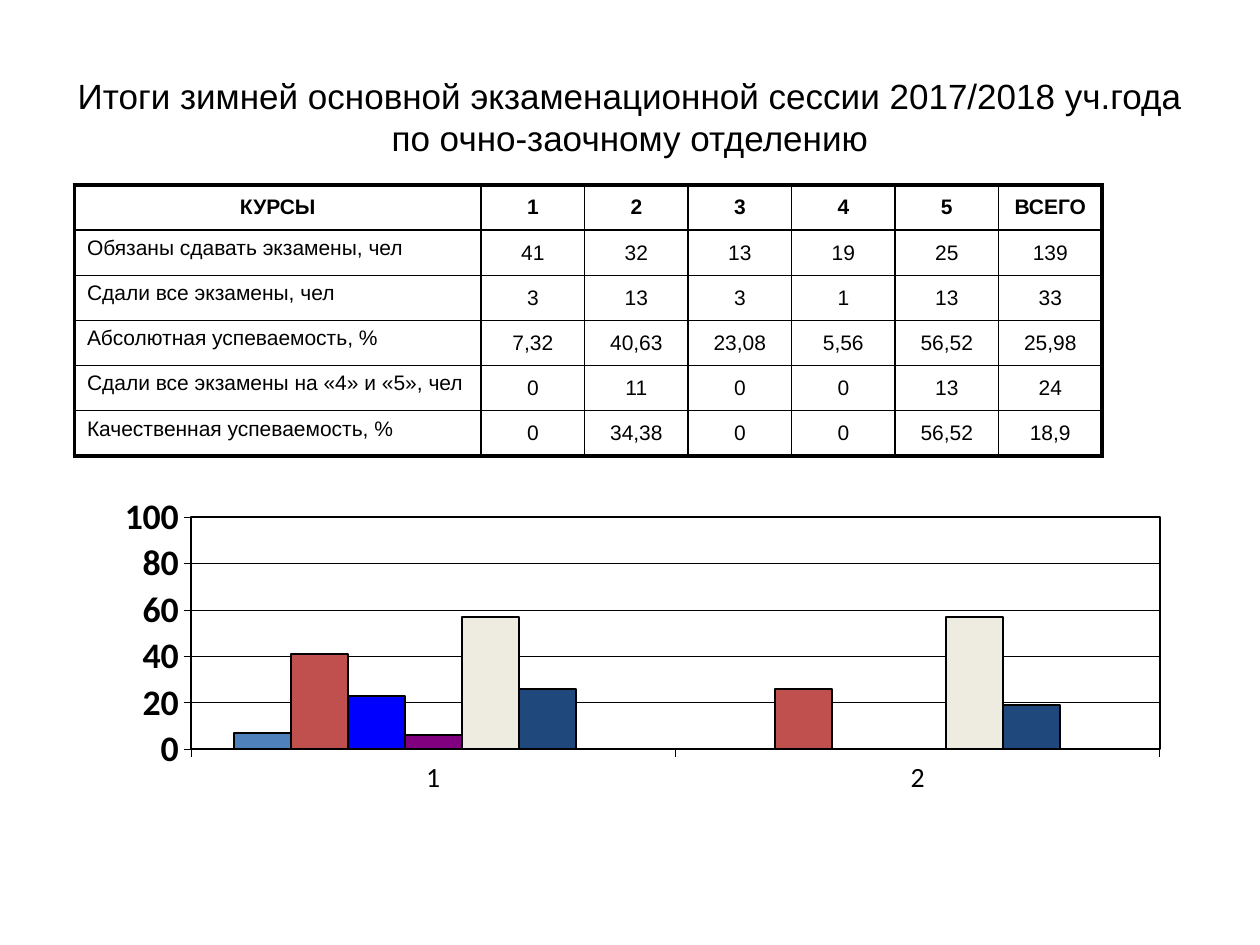
from dataclasses import dataclass
from typing import Any, NamedTuple

from lxml import etree
from pptx import Presentation
from pptx.chart.data import CategoryChartData
from pptx.dml.color import RGBColor
from pptx.enum.chart import XL_CHART_TYPE, XL_TICK_MARK
from pptx.enum.text import MSO_ANCHOR, PP_ALIGN
from pptx.oxml import parse_xml
from pptx.oxml.ns import nsdecls, qn
from pptx.util import Cm, Pt

COLUMNS = XL_CHART_TYPE.COLUMN_CLUSTERED
OUTSIDE = XL_TICK_MARK.OUTSIDE
MIDDLE, TOP = MSO_ANCHOR.MIDDLE, MSO_ANCHOR.TOP
CENTER, LEFT = PP_ALIGN.CENTER, PP_ALIGN.LEFT


@dataclass(frozen=True)
class Theme:
    ink: str = "000000"
    text_font: str = "Arial"
    chart_font: str = "Calibri"
    title: float = 20
    body: float = 12
    value_axis: float = 20.5
    category_axis: float = 15.9
    outer_border: float = 2.25
    inner_border: float = 1
    axis_line: float = 0.28
    bar_line: float = 1.14


class Box(NamedTuple):
    left: float
    top: float
    width: float
    height: float


class Bar(NamedTuple):
    color: str
    values: tuple


THEME = Theme()
TITLE_BOX = Box(1.27, 0.76, 22.86, 3.18)
TABLE_BOX = Box(1.5, 3.73, 20.72, 5.46)
CHART_BOX = Box(1.68, 9.47, 21.72, 7.32)
LABEL_WIDTH = 8.2
PLOT_LAYOUT = {"x": 0.1, "y": 0.13, "w": 0.9, "h": 0.64}

TITLE = "Итоги зимней основной экзаменационной сессии 2017/2018 уч.года по очно-заочному отделению"
RESULTS = [
    ("КУРСЫ", "1", "2", "3", "4", "5", "ВСЕГО"),
    ("Обязаны сдавать экзамены, чел", "41", "32", "13", "19", "25", "139"),
    ("Сдали все экзамены, чел", "3", "13", "3", "1", "13", "33"),
    ("Абсолютная успеваемость, %", "7,32", "40,63", "23,08", "5,56", "56,52", "25,98"),
    ("Сдали все экзамены на «4» и «5», чел", "0", "11", "0", "0", "13", "24"),
    ("Качественная успеваемость, %", "0", "34,38", "0", "0", "56,52", "18,9"),
]
BARS = [
    Bar("4F81BD", (7, 0)),
    Bar("C0504D", (41, 26)),
    Bar("0000FF", (23, 0)),
    Bar("800080", (6, 0)),
    Bar("EEECE1", (57, 57)),
    Bar("1F497D", (26, 19)),
    Bar("4F81BD", (None, None)),
]


def apply(target: Any, formats: dict) -> None:
    for name, value in formats.items():
        setattr(target, name, value)


def style_font(font: Any, name: str, size: float, bold: bool = False) -> None:
    apply(font, {"name": name, "size": Pt(size), "bold": bold})
    font.color.rgb = RGBColor.from_string(THEME.ink)


def style_line(line: Any, width: float) -> None:
    line.color.rgb = RGBColor.from_string(THEME.ink)
    line.width = Pt(width)


def write(tf: Any, text: str, size: float, bold: bool, formats: dict) -> None:
    p = tf.paragraphs[0]
    apply(p, formats)
    r = p.add_run()
    r.text = text
    style_font(r.font, THEME.text_font, size, bold)


def add_title(s: Any) -> None:
    tf = s.shapes.add_textbox(*map(Cm, TITLE_BOX)).text_frame
    apply(tf, {"word_wrap": True, "vertical_anchor": MIDDLE})
    write(tf, TITLE, THEME.title, False, {"alignment": CENTER})


def add_borders(cell: Any, outer_sides: dict) -> None:
    tc_pr = cell._tc.get_or_add_tcPr()
    for side, is_outer in outer_sides.items():
        width = THEME.outer_border if is_outer else THEME.inner_border
        ln = etree.SubElement(tc_pr, qn(f"a:ln{side}"), w=str(Pt(width)))
        fill = etree.SubElement(ln, qn("a:solidFill"))
        etree.SubElement(fill, qn("a:srgbClr"), val=THEME.ink)


def add_results(s: Any) -> None:
    last_row, last_col = len(RESULTS) - 1, len(RESULTS[0]) - 1
    table = s.shapes.add_table(last_row + 1, last_col + 1, *map(Cm, TABLE_BOX)).table
    apply(table, {"first_row": False, "horz_banding": False})
    for j, column in enumerate(table.columns):
        column.width = Cm((TABLE_BOX.width - LABEL_WIDTH) / last_col if j else LABEL_WIDTH)
    for i, row in enumerate(RESULTS):
        for j, text in enumerate(row):
            cell = table.cell(i, j)
            is_label = i > 0 and j == 0
            cell.vertical_anchor = TOP if is_label else MIDDLE
            write(cell.text_frame, text, THEME.body, i == 0, {
                "alignment": LEFT if is_label else CENTER,
                "space_before": Pt(THEME.body * 0.2),
            })
            add_borders(cell, {"L": j == 0, "R": j == last_col, "T": i == 0, "B": i == last_row})
            cell.fill.background()


def frame_plot(chart: Any) -> None:
    area = chart._chartSpace.find(f".//{qn('c:plotArea')}")
    for old in area.findall(qn("c:layout")):
        area.remove(old)
    sizes = "".join(f'<c:{key} val="{value}"/>' for key, value in PLOT_LAYOUT.items())
    area.insert(0, parse_xml(
        f'<c:layout {nsdecls("c")}><c:manualLayout><c:layoutTarget val="inner"/>'
        f'<c:xMode val="edge"/><c:yMode val="edge"/>{sizes}</c:manualLayout></c:layout>'))
    area.append(parse_xml(
        f'<c:spPr {nsdecls("c", "a")}><a:noFill/><a:ln w="{Pt(THEME.bar_line)}">'
        f'<a:solidFill><a:srgbClr val="{THEME.ink}"/></a:solidFill></a:ln></c:spPr>'))


def add_chart(s: Any) -> None:
    data = CategoryChartData()
    data.categories = ["1", "2"]
    for number, bar in enumerate(BARS, 1):
        data.add_series(f"Series {number}", bar.values)
    chart = s.shapes.add_chart(COLUMNS, *map(Cm, CHART_BOX), data).chart
    apply(chart, {"has_legend": False, "has_title": False})
    style_font(chart.font, THEME.chart_font, THEME.value_axis, True)
    plot = chart.plots[0]
    apply(plot, {"vary_by_categories": False, "gap_width": 150, "overlap": 0})
    for series, bar in zip(plot.series, BARS):
        series.format.fill.solid()
        series.format.fill.fore_color.rgb = RGBColor.from_string(bar.color)
        style_line(series.format.line, THEME.bar_line)
    plot.series[len(BARS) - 1].data_labels.show_value = True
    for axis, size, bold in (
        (chart.category_axis, THEME.category_axis, False),
        (chart.value_axis, THEME.value_axis, True),
    ):
        axis.major_tick_mark = OUTSIDE
        style_font(axis.tick_labels.font, THEME.chart_font, size, bold)
        style_line(axis.format.line, THEME.axis_line)
    apply(chart.value_axis, {
        "minimum_scale": 0, "maximum_scale": 100, "major_unit": 20, "has_major_gridlines": True,
    })
    style_line(chart.value_axis.major_gridlines.format.line, THEME.axis_line)
    frame_plot(chart)


def main() -> None:
    prs = Presentation()
    apply(prs, {"slide_width": Cm(25.4), "slide_height": Cm(19.05)})
    s = prs.slides.add_slide(prs.slide_layouts[6])
    add_title(s)
    add_chart(s)
    add_results(s)
    prs.save("out.pptx")


if __name__ == "__main__":
    main()
